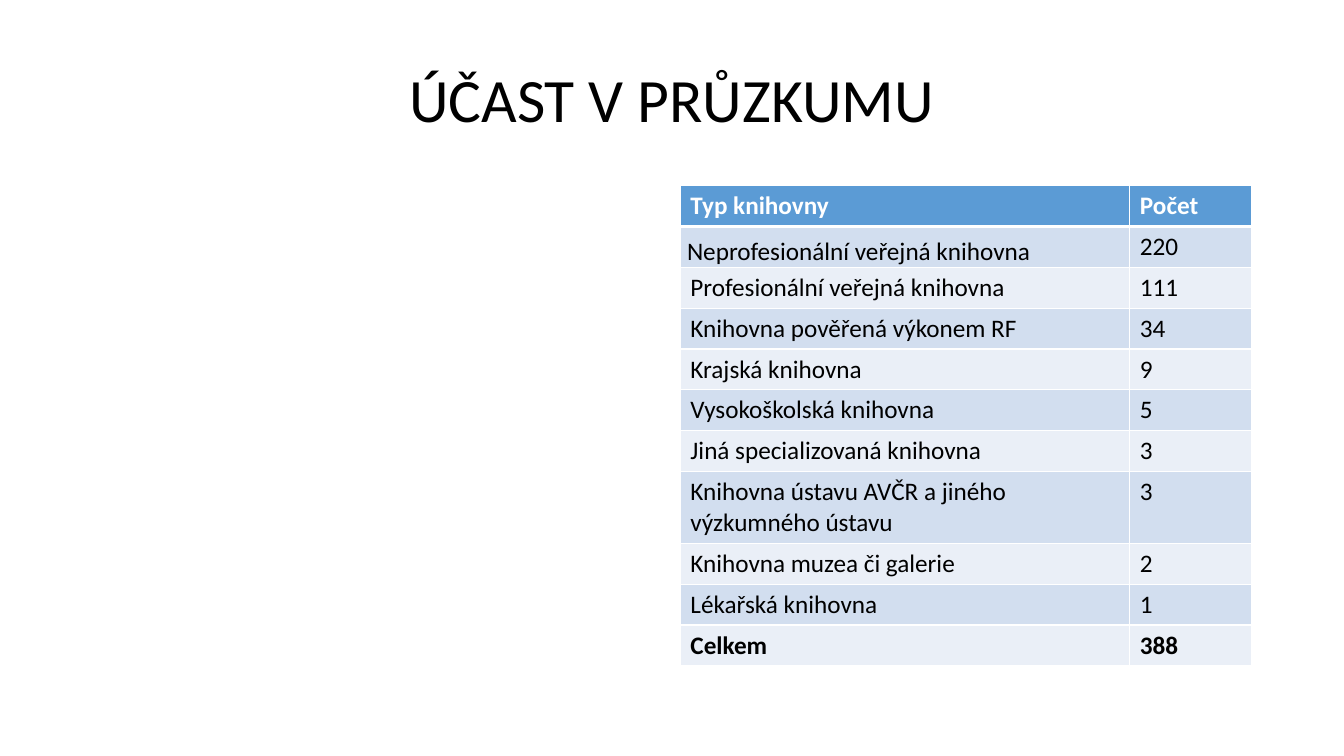
import pptx
import pptx.dml.color
import pptx.enum.text
import pptx.oxml
import pptx.oxml.ns
import pptx.util

Pt = pptx.util.Pt
FONT = "Calibri"
WHITE, BLACK, BLUE = "FFFFFF", "000000", "5B9BD5"
BANDS = ("D2DEEF", "EAEFF7")
ROW_HEIGHT, WRAPPED_HEIGHT = 29.2, 51.1
COUNT_WIDTH = 86.9

LIBRARIES = [
    ("Typ knihovny", "Počet"),
    ("Neprofesionální veřejná knihovna", "220"),
    ("Profesionální veřejná knihovna", "111"),
    ("Knihovna pověřená výkonem RF", "34"),
    ("Krajská knihovna", "9"),
    ("Vysokoškolská knihovna", "5"),
    ("Jiná specializovaná knihovna", "3"),
    ("Knihovna ústavu AVČR a jiného výzkumného ústavu", "3"),
    ("Knihovna muzea či galerie", "2"),
    ("Lékařská knihovna", "1"),
    ("Celkem", "388"),
]
WRAPPED_ROW = 7


def rgb(color):
    return pptx.dml.color.RGBColor.from_string(color)


def set_font(p, size, color, bold=False):
    p.font.name = FONT
    p.font.size = Pt(size)
    p.font.bold = bold
    p.font.color.rgb = rgb(color)


def set_borders(cell, color, bottom):
    tc_pr = cell._tc.get_or_add_tcPr()
    for side, width in (("L", 1), ("R", 1), ("T", 1), ("B", bottom)):
        tc_pr.append(pptx.oxml.parse_xml(
            f'<a:ln{side} {pptx.oxml.ns.nsdecls("a")} w="{Pt(width)}">'
            f'<a:solidFill><a:srgbClr val="{color}"/></a:solidFill></a:ln{side}>'))


def add_title(slide, text, left, top, width, height):
    sp = slide.shapes.title
    sp.left, sp.top, sp.width, sp.height = Pt(left), Pt(top), Pt(width), Pt(height)
    tf = sp.text_frame
    tf.text = text
    tf.vertical_anchor = pptx.enum.text.MSO_ANCHOR.MIDDLE
    p = tf.paragraphs[0]
    p.alignment = pptx.enum.text.PP_ALIGN.CENTER
    p.line_spacing = 0.9
    set_font(p, 44, BLACK)


def add_library_table(slide, left, top, width, height):
    table = slide.shapes.add_table(
        len(LIBRARIES), 2, Pt(left), Pt(top), Pt(width), Pt(height)).table
    table.columns[0].width = Pt(width - COUNT_WIDTH)
    table.columns[1].width = Pt(COUNT_WIDTH)
    last = len(LIBRARIES) - 1
    for i, values in enumerate(LIBRARIES):
        header = i == 0
        table.rows[i].height = Pt(WRAPPED_HEIGHT if i == WRAPPED_ROW else ROW_HEIGHT)
        for j, value in enumerate(values):
            cell = table.cell(i, j)
            cell.text = value
            set_font(cell.text_frame.paragraphs[0], 18,
                     WHITE if header else BLACK, i in (0, last))
            set_borders(cell, WHITE, 3 if header else 1)
            cell.fill.solid()
            cell.fill.fore_color.rgb = rgb(BLUE if header else BANDS[(i - 1) % 2])

    # The first library sits at the bottom of its cell with tight margins
    cell = table.cell(1, 0)
    cell.vertical_anchor = pptx.enum.text.MSO_ANCHOR.BOTTOM
    cell.margin_left, cell.margin_right = Pt(4.75), Pt(0.75)
    cell.margin_top, cell.margin_bottom = Pt(0.75), Pt(0)


def main():
    prs = pptx.Presentation()
    prs.slide_width, prs.slide_height = Pt(960), Pt(540)
    slide = prs.slides.add_slide(prs.slide_layouts[5])
    add_title(slide, "ÚČAST V PRŮZKUMU", 66, 28.75, 828, 89.5)
    add_library_table(slide, 486, 132.5, 408, 343)
    prs.save("out.pptx")


if __name__ == "__main__":
    main()
